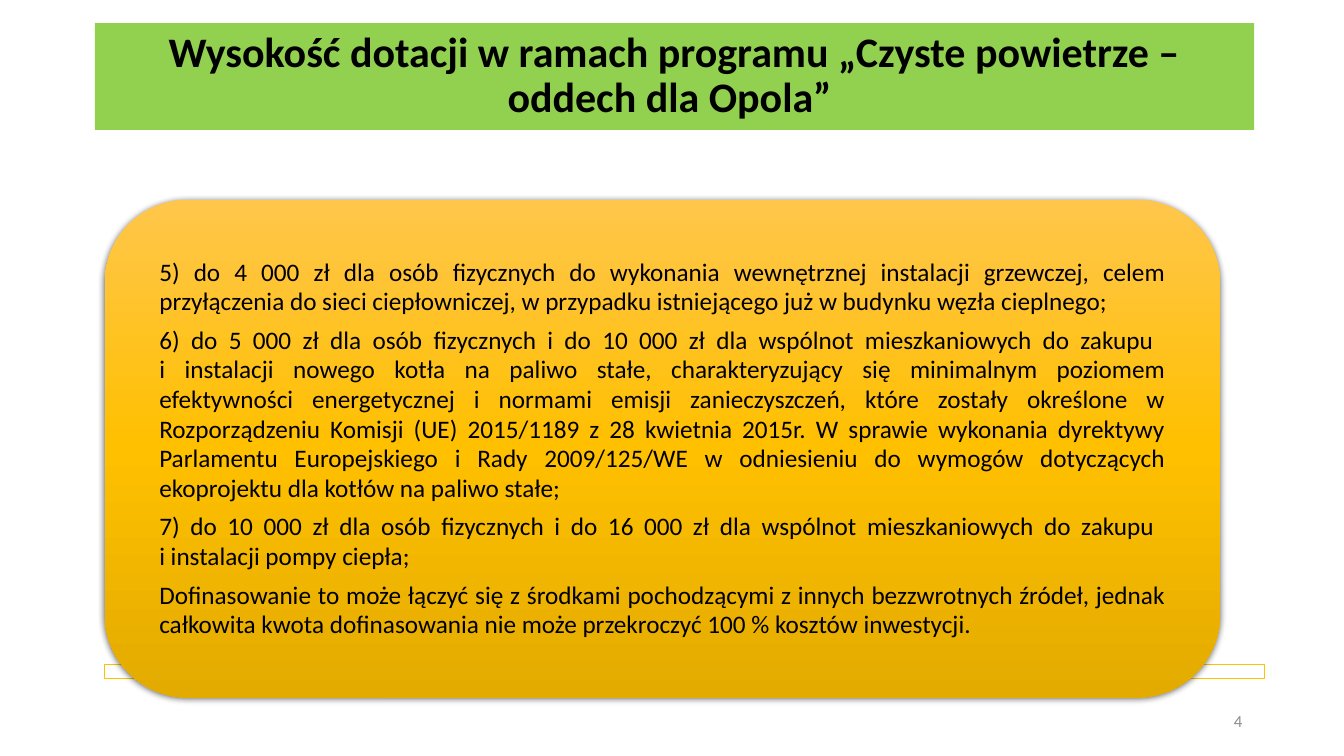
from lxml import etree
from pptx import Presentation
from pptx import util as u
from pptx.dml.color import RGBColor
from pptx.enum import shapes, text
from pptx.oxml import parse_xml
from pptx.oxml.ns import nsdecls, qn

WIDTH, HEIGHT = 13.33, 7.5
FONT = "Calibri"
COLORS = {
    "text": "000000", "number": "8C8C8C", "title": "92D050",
    "strip": "FFFFFF", "strip_line": "FFC000", "shadow": "000000",
    "panel_top": "FFC64B", "panel_middle": "FFC000", "panel_bottom": "E3AB00",
}
TITLE = "Wysokość dotacji w ramach programu „Czyste powietrze – oddech dla Opola” "
GRANTS = [
    "5) do 4 000 zł dla osób fizycznych do wykonania wewnętrznej instalacji grzewczej, "
    "celem przyłączenia do sieci ciepłowniczej, w przypadku istniejącego już w budynku "
    "węzła cieplnego;",
    "6) do 5 000 zł dla osób fizycznych i do 10 000 zł dla wspólnot mieszkaniowych do zakupu \v"
    "i instalacji nowego kotła na paliwo stałe, charakteryzujący się minimalnym poziomem "
    "efektywności energetycznej i normami emisji zanieczyszczeń, które zostały określone w "
    "Rozporządzeniu Komisji (UE) 2015/1189 z 28 kwietnia 2015r. W sprawie wykonania dyrektywy "
    "Parlamentu Europejskiego i Rady 2009/125/WE w odniesieniu do wymogów dotyczących "
    "ekoprojektu dla kotłów na paliwo stałe;",
    "7) do 10 000 zł dla osób fizycznych i do 16 000 zł dla wspólnot mieszkaniowych do zakupu \v"
    "i instalacji pompy ciepła;",
    "Dofinasowanie to może łączyć się z środkami pochodzącymi z innych bezzwrotnych źródeł, "
    "jednak całkowita kwota dofinasowania nie może przekroczyć 100 % kosztów inwestycji. ",
]


def color(name):
    return RGBColor.from_string(COLORS[name])


def add_box(slide, kind, box):
    shape = slide.shapes.add_shape(kind, *map(u.Inches, box))
    shape.shadow.inherit = False
    shape.line.fill.background()
    return shape


def write(shape, paragraphs, size, align, ink="text", bold=False,
          spacing=None, after=0, side=0.1, edge=0.05):
    frame = shape.text_frame
    frame.word_wrap = True
    frame.vertical_anchor = text.MSO_ANCHOR.MIDDLE
    frame.margin_left = frame.margin_right = u.Inches(side)
    frame.margin_top = frame.margin_bottom = u.Inches(edge)
    for index, content in enumerate(paragraphs):
        paragraph = frame.add_paragraph() if index else frame.paragraphs[0]
        paragraph.text = content
        paragraph.alignment = align
        paragraph.line_spacing = spacing
        paragraph.space_after = u.Pt(after)
        font = paragraph.font
        font.name, font.size, font.bold = FONT, u.Pt(size), bold
        font.color.rgb = color(ink)


def add_title(slide, box):
    banner = add_box(slide, shapes.MSO_SHAPE.RECTANGLE, box)
    banner.fill.solid()
    banner.fill.fore_color.rgb = color("title")
    write(banner, [TITLE], 30, text.PP_ALIGN.CENTER, bold=True, spacing=0.9)


def add_strip(slide, box):
    strip = add_box(slide, shapes.MSO_SHAPE.RECTANGLE, box)
    strip.fill.solid()
    strip.fill.fore_color.rgb = color("strip")
    fill_color = strip.fill._xPr.find(qn("a:solidFill"))[0]
    etree.SubElement(fill_color, qn("a:alpha"), val="90000")
    strip.line.color.rgb = color("strip_line")
    strip.line.width = u.Pt(0.5)


def add_panel(slide, box):
    panel = add_box(slide, shapes.MSO_SHAPE.ROUNDED_RECTANGLE, box)
    # Vertical gradient with three stops
    panel.fill.gradient()
    panel.fill.gradient_angle = 270
    stops = panel._element.spPr.find(qn("a:gradFill")).find(qn("a:gsLst"))
    for stop in list(stops):
        stops.remove(stop)
    for position, name in enumerate(("panel_top", "panel_middle", "panel_bottom")):
        stop = etree.SubElement(stops, qn("a:gs"), pos=str(position * 50000))
        etree.SubElement(stop, qn("a:srgbClr"), val=COLORS[name])
    # Soft shadow below
    effects = panel._element.spPr.find(qn("a:effectLst"))
    effects.append(parse_xml(
        f'<a:outerShdw {nsdecls("a")} blurRad="{u.Pt(4.5)}" dist="{u.Pt(1.5)}" '
        f'dir="5400000" rotWithShape="0"><a:srgbClr val="{COLORS["shadow"]}">'
        '<a:alpha val="63000"/></a:srgbClr></a:outerShdw>'))
    # Grant list, inset evenly from the panel edges
    left, top, width, height = box
    inset = 0.24
    area = (left + inset, top + inset, width - 2 * inset, height - 2 * inset)
    grants = slide.shapes.add_textbox(*map(u.Inches, area))
    write(grants, GRANTS, 18, text.PP_ALIGN.JUSTIFY, spacing=0.98, after=6.3,
          side=0.3, edge=0)


def add_page_number(slide, box):
    number = slide.shapes.add_textbox(*map(u.Inches, box))
    write(number, ["4"], 12, text.PP_ALIGN.RIGHT, ink="number")


def main():
    presentation = Presentation()
    presentation.slide_width = u.Inches(WIDTH)
    presentation.slide_height = u.Inches(HEIGHT)
    slide = presentation.slides.add_slide(presentation.slide_layouts[6])
    add_strip(slide, (1.04, 6.59, 11.5, 0.14))
    add_panel(slide, (1.04, 1.98, 11.06, 4.94))
    add_title(slide, (0.94, 0.23, 11.5, 1.06))
    add_page_number(slide, (9.42, 6.95, 3, 0.4))
    presentation.save("out.pptx")


if __name__ == "__main__":
    main()
